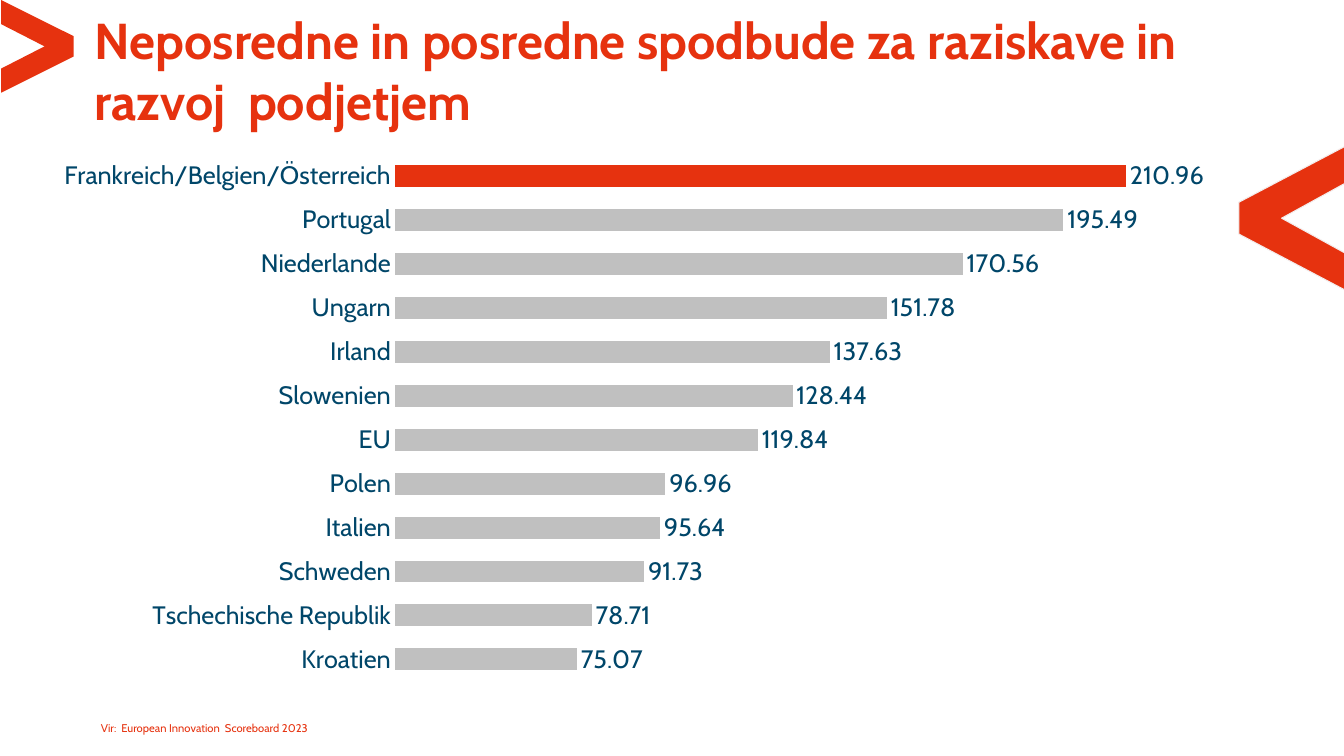
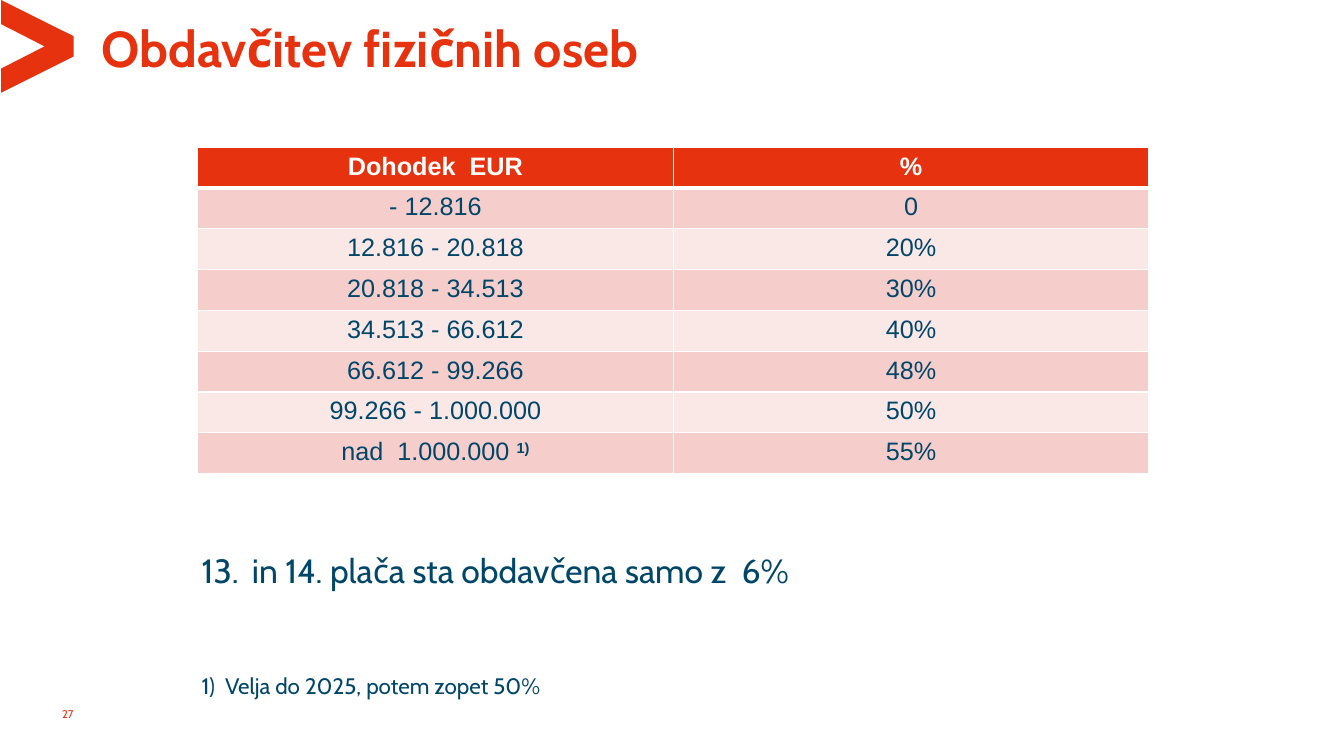
from dataclasses import dataclass

from lxml import etree
from pptx import Presentation
from pptx import util as u
from pptx.chart import data as chart_data
from pptx.dml import color as dml
from pptx.enum import chart as charts, text
from pptx.oxml import ns


@dataclass(frozen=True)
class Theme:
    red: str = "E6320F"
    navy: str = "004669"
    gray: str = "C0C0C0"
    white: str = "FFFFFF"
    outline: str = "F3EDED"
    bands: tuple = ("F5CECC", "FAE8E7")
    font: str = "Cabin"
    table_font: str = "Arial"
    title: int = 36
    statement: int = 24
    body: int = 18
    note: int = 16
    small: int = 8


THEME = Theme()
WIDTH, HEIGHT = u.Inches(13.33), u.Inches(7.5)

INCENTIVES = {
    "Frankreich/Belgien/Österreich": 210.96,
    "Portugal": 195.49,
    "Niederlande": 170.56,
    "Ungarn": 151.78,
    "Irland": 137.63,
    "Slowenien": 128.44,
    "EU": 119.84,
    "Polen": 96.96,
    "Italien": 95.64,
    "Schweden": 91.73,
    "Tschechische Republik": 78.71,
    "Kroatien": 75.07,
}

TAX_ROWS = [
    ("Dohodek  EUR", "%"),
    ("- 12.816", "0"),
    ("12.816 - 20.818", "20%"),
    ("20.818 - 34.513", "30%"),
    ("34.513 - 66.612", "40%"),
    ("66.612 - 99.266", "48%"),
    ("99.266 - 1.000.000", "50%"),
    ("nad  1.000.000 ", "55%"),
]


def area(left, top, width, height):
    shares = ((left, WIDTH), (top, HEIGHT), (width, WIDTH), (height, HEIGHT))
    return [u.Emu(round(percent * full / 100)) for percent, full in shares]


def rgb(value):
    return dml.RGBColor.from_string(value)


def paint(fill, value):
    fill.solid()
    fill.fore_color.rgb = rgb(value)


def style_font(font, size, color=THEME.navy, name=THEME.font, bold=False):
    font.size = u.Pt(size)
    font.name = name
    font.bold = bold
    font.color.rgb = rgb(color)


def write(paragraph, content, *, align=text.PP_ALIGN.LEFT, raised=False, **style):
    paragraph.alignment = align
    run = paragraph.add_run()
    run.text = content
    style_font(run.font, **style)
    if raised:
        run.font._element.set("baseline", "30000")


def prepare_frame(frame, margin=0, anchor=text.MSO_ANCHOR.TOP, wrap=True):
    frame.word_wrap = wrap
    frame.auto_size = text.MSO_AUTO_SIZE.NONE
    frame.vertical_anchor = anchor
    frame.margin_left = frame.margin_right = u.Inches(margin)
    frame.margin_top = frame.margin_bottom = u.Inches(margin)


def add_text_area(slide, box, **frame_format):
    frame = slide.shapes.add_textbox(*area(*box)).text_frame
    prepare_frame(frame, **frame_format)
    return frame


def add_titled_slide(presentation, title, box):
    slide = presentation.slides.add_slide(presentation.slide_layouts[5])
    shape = slide.shapes.title
    shape.left, shape.top, shape.width, shape.height = area(*box)
    prepare_frame(shape.text_frame, anchor=text.MSO_ANCHOR.MIDDLE)
    write(shape.text_frame.paragraphs[0], title,
          size=THEME.title, color=THEME.red, bold=True)
    return slide


def add_chevron(slide, box, arm, notch, nose, pointing_left=False):
    left, top, width, height = area(*box)
    outline = [(0, 0), (0, arm), (notch, 0.5), (0, 1 - arm),
               (0, 1), (1, 1 - nose), (1, nose)]
    points = [(left + width * (1 - x if pointing_left else x), top + height * y)
              for x, y in outline]
    builder = slide.shapes.build_freeform(*points[0])
    builder.add_line_segments(points[1:], close=True)
    shape = builder.convert_to_shape()
    shape.shadow.inherit = False
    paint(shape.fill, THEME.red)
    shape.line.fill.background()
    return shape


def share_on_layout(shape, layout):
    element = shape.element
    element.nvSpPr.cNvPr.set("id", "20")
    layout.shapes.element.append(element)


def set_plot_area(chart, **shares):
    plot_area = chart.element.find(".//" + ns.qn("c:plotArea"))
    for old in plot_area.findall(ns.qn("c:layout")):
        plot_area.remove(old)
    layout = etree.Element(ns.qn("c:layout"))
    manual = etree.SubElement(layout, ns.qn("c:manualLayout"))
    settings = {"layoutTarget": "inner", "xMode": "edge", "yMode": "edge", **shares}
    for tag, value in settings.items():
        etree.SubElement(manual, ns.qn("c:" + tag)).set("val", str(value))
    plot_area.insert(0, layout)


def add_bar_chart(slide, values, box):
    data = chart_data.CategoryChartData(number_format="#,##0.00")
    data.categories = values.keys()
    data.add_series("Series 1", values.values())
    chart = slide.shapes.add_chart(
        charts.XL_CHART_TYPE.BAR_CLUSTERED, *area(*box), data).chart
    chart.has_title = False
    chart.has_legend = False
    style_font(chart.font, THEME.note)
    set_plot_area(chart, x=0.3, y=0.02, w=0.69, h=0.96)

    category_axis = chart.category_axis
    category_axis.reverse_order = True
    category_axis.has_major_gridlines = False
    category_axis.major_tick_mark = charts.XL_TICK_MARK.NONE
    category_axis.format.line.fill.background()
    style_font(category_axis.tick_labels.font, THEME.body)

    value_axis = chart.value_axis
    value_axis.minimum_scale, value_axis.maximum_scale = 30, 230
    value_axis.has_major_gridlines = False
    value_axis.visible = False

    plot = chart.plots[0]
    plot.gap_width, plot.overlap = 100, -10
    plot.vary_by_categories = False
    series = plot.series[0]
    paint(series.format.fill, THEME.gray)
    paint(series.points[0].format.fill, THEME.red)
    labels = series.data_labels
    labels.show_value = True
    labels.position = charts.XL_LABEL_POSITION.OUTSIDE_END
    labels.number_format = "#,##0.00"
    labels.number_format_is_linked = False
    style_font(labels.font, THEME.body)


def set_borders(cell, **widths):
    properties = cell._tc.get_or_add_tcPr()
    for side in "LRTB":
        line = etree.SubElement(properties, ns.qn("a:ln" + side))
        line.set("w", str(u.Pt(widths.get(side, 1))))
        fill = etree.SubElement(line, ns.qn("a:solidFill"))
        etree.SubElement(fill, ns.qn("a:srgbClr")).set("val", THEME.white)


def add_tax_table(slide, rows, box):
    table = slide.shapes.add_table(len(rows), len(rows[0]), *area(*box)).table
    for row, values in enumerate(rows):
        header = row == 0
        for column, value in enumerate(values):
            cell = table.cell(row, column)
            set_borders(cell, B=3 if header else 1, T=3 if row == 1 else 1)
            paint(cell.fill, THEME.red if header else THEME.bands[(row - 1) % 2])
            write(cell.text_frame.paragraphs[0], value, size=THEME.body,
                  color=THEME.white if header else THEME.navy,
                  name=THEME.table_font, bold=header, align=text.PP_ALIGN.CENTER)
    write(table.cell(len(rows) - 1, 0).text_frame.paragraphs[0], "1)",
          size=THEME.body, name=THEME.table_font, bold=True, raised=True,
          align=text.PP_ALIGN.CENTER)


def number_paragraph(paragraph, start, indent):
    properties = paragraph._p.get_or_add_pPr()
    properties.set("marL", str(u.Inches(indent)))
    properties.set("indent", str(-u.Inches(indent)))
    number = etree.SubElement(properties, ns.qn("a:buAutoNum"))
    number.set("type", "arabicPeriod")
    number.set("startAt", str(start))


def build_incentives(presentation):
    slide = add_titled_slide(
        presentation,
        "Neposredne in posredne spodbude za raziskave in razvoj  podjetjem",
        (7.05, 6.13, 87.98, 6.27))
    corner = add_chevron(slide, (0.08, 0, 5.4, 12.27), arm=0.26, notch=0.6, nose=0.39)
    share_on_layout(corner, slide.slide_layout)
    source = add_text_area(slide, (7.2, 94.93, 16.65, 2.8), margin=0.04, wrap=False)
    write(source.paragraphs[0], "Vir:  European Innovation  Scoreboard 2023",
          size=THEME.small, color=THEME.red)
    edge = add_chevron(slide, (92.18, 15.73, 11.78, 26.27),
                       arm=0.18, notch=0.73, nose=0.42, pointing_left=True)
    edge.line.color.rgb = rgb(THEME.outline)
    edge.line.width = u.Pt(0.75)
    add_bar_chart(slide, INCENTIVES, (3.23, 18.93, 87.15, 72.67))


def build_taxation(presentation):
    slide = add_titled_slide(
        presentation, "Obdavčitev fizičnih oseb", (7.58, 3.07, 77.18, 6.27))
    page = add_text_area(slide, (0.98, 93.33, 4.5, 2), anchor=text.MSO_ANCHOR.BOTTOM)
    write(page.paragraphs[0], "27", size=THEME.small, color=THEME.red,
          align=text.PP_ALIGN.RIGHT)
    add_tax_table(slide, TAX_ROWS, (14.7, 19.47, 70.8, 43.2))
    remarks = add_text_area(slide, (15, 72.8, 46.8, 19.73))
    salary = remarks.paragraphs[0]
    number_paragraph(salary, start=13, indent=0.5)
    write(salary, "in 14. plača sta obdavčena samo z  6%", size=THEME.statement)
    footnote = remarks.add_paragraph()
    footnote.space_before = u.Pt(58)
    write(footnote, "1)  Velja do 2025, potem zopet 50%", size=THEME.note)


def main():
    presentation = Presentation()
    presentation.slide_width, presentation.slide_height = WIDTH, HEIGHT
    build_incentives(presentation)
    build_taxation(presentation)
    presentation.save("out.pptx")


if __name__ == "__main__":
    main()
